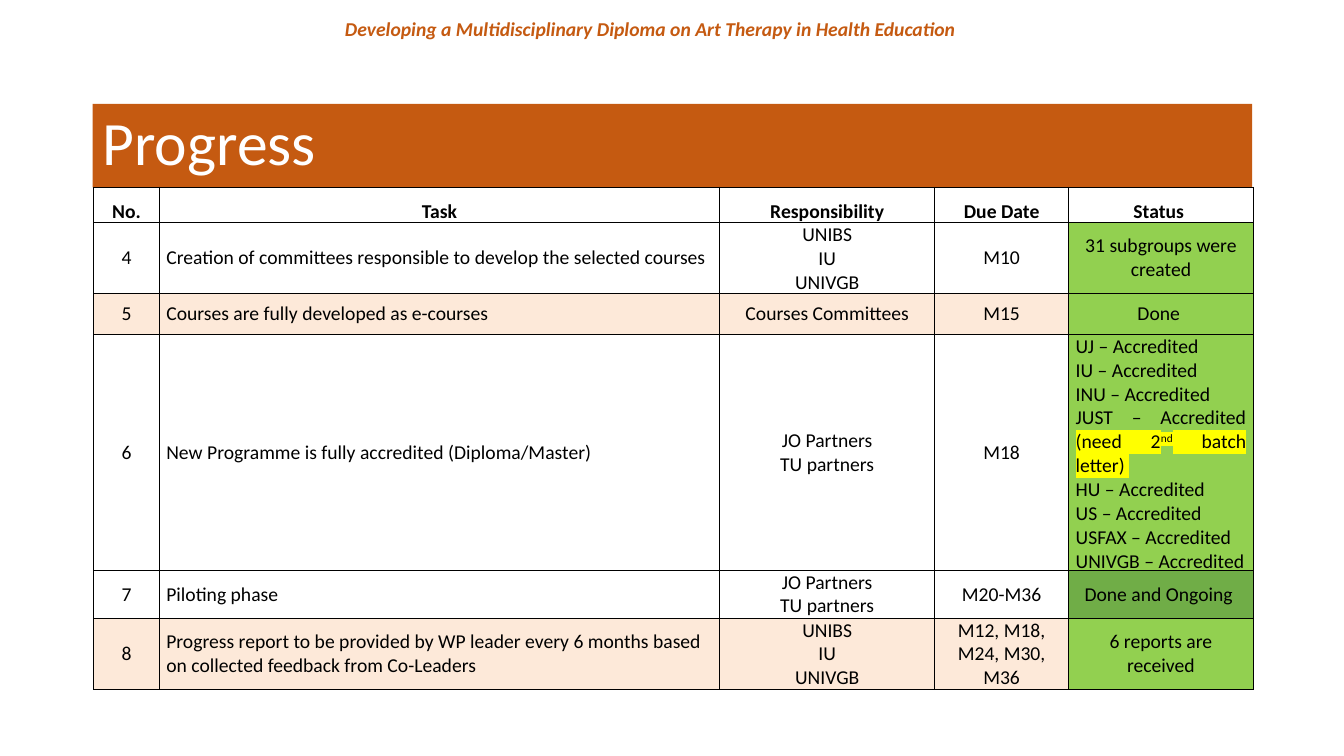
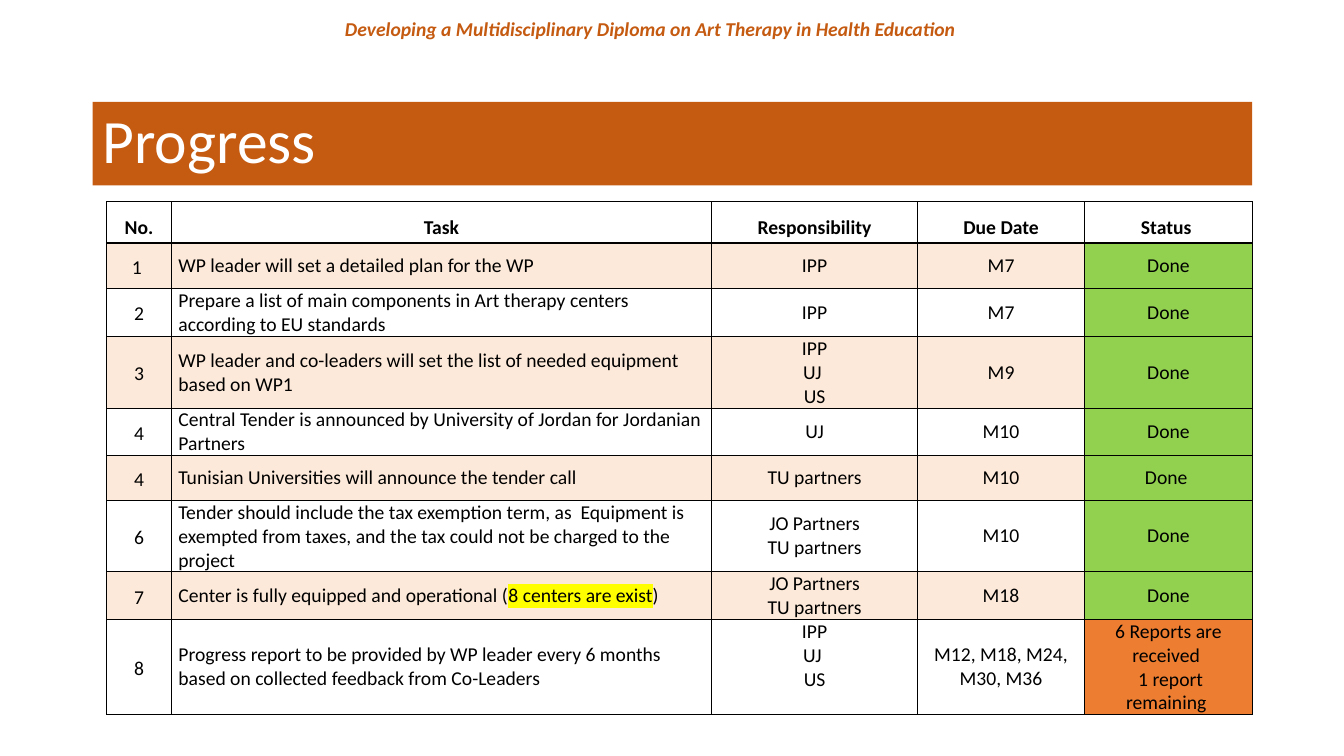
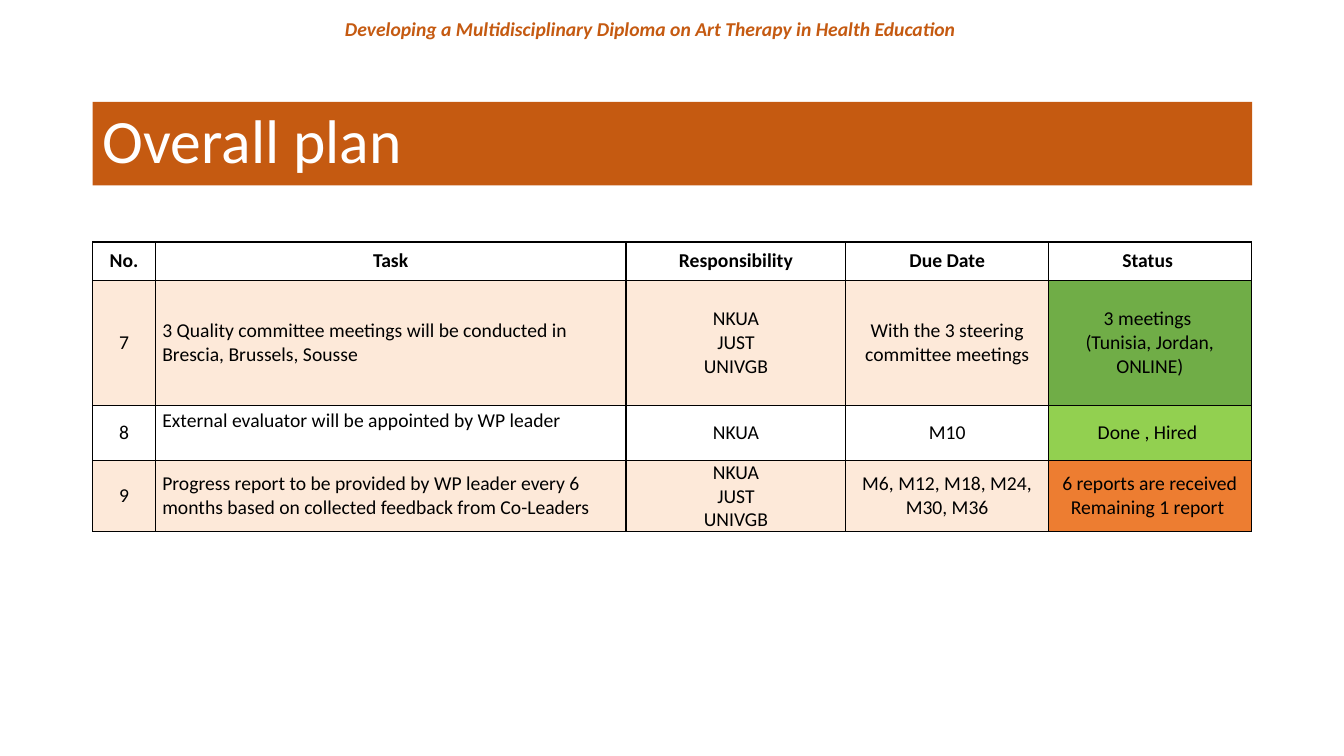
from dataclasses import dataclass
from typing import NamedTuple, Optional, Union

from lxml import etree
from pptx import Presentation
from pptx.dml.color import RGBColor
from pptx.enum.shapes import MSO_SHAPE
from pptx.enum.text import MSO_ANCHOR, PP_ALIGN
from pptx.oxml.ns import qn
from pptx.util import Emu, Pt

CENTER, LEFT, JUSTIFY = PP_ALIGN.CENTER, PP_ALIGN.LEFT, PP_ALIGN.JUSTIFY
MIDDLE = MSO_ANCHOR.MIDDLE
RECTANGLE = MSO_SHAPE.RECTANGLE

# Shared look: lengths are px, 100 to the inch
EMU_PER_PX = 9144
SLIDE_W, SLIDE_H = 1333, 750
BAND_LEFT, BAND_W, BAND_H = 92, 1150, 83
CELL_INSET = 7
LINE_H = 24
FONT = "Calibri"
BODY_PT, TITLE_PT = 14, 44
ORANGE, BLACK, WHITE, YELLOW = "C55A11", "000000", "FFFFFF", "FFFF00"
PEACH, DONE, ONGOING, REMAINING = "FDE9D9", "92D050", "70AD47", "ED7D31"

PROJECT = "Developing a Multidisciplinary Diploma on Art Therapy in Health Education "
HEADINGS = ("No.", "Task", "Responsibility", "Due Date", "Status ")
TASK, RESPONSIBILITY, STATUS = 1, 2, 4
REPORT_TASK = ("Progress report to be provided by WP leader every 6 months "
               "based on collected feedback from Co-Leaders")
JO_TU = "JO Partners\nTU partners"
BRESCIA_GROUP = "UNIBS\nIU\nUNIVGB"
CENTER_GROUP = "IPP\nUJ \nUS"
QUALITY_GROUP = "NKUA\nJUST\nUNIVGB"


class Run(NamedTuple):
    text: str
    highlight: Optional[str] = None
    superscript: bool = False


# One line of text per newline, or a list of paragraphs made of runs
Content = Union[str, list[list[Run]]]


@dataclass
class TaskRow:
    number: str
    task: Content
    responsibility: str
    due: str
    status: Content = "Done"
    status_fill: str = DONE
    shaded: bool = False
    status_align: PP_ALIGN = CENTER
    raised_column: Optional[int] = None  # its text sits half a line higher


@dataclass
class Plan:
    title: str
    band_top: int
    left: int
    top: int
    columns: list[int]
    heights: list[int]
    rows: list[TaskRow]
    heading_spacing: float = 1.0
    number_spacing: float = 1.0
    number_after: int = 0


ACCREDITATION = [
    [Run("UJ – Accredited ")],
    [Run("IU – Accredited ")],
    [Run("INU – Accredited")],
    [Run("JUST – Accredited "), Run("(need 2", YELLOW), Run("nd", YELLOW, True),
     Run(" batch letter) ", YELLOW)],
    *([Run(f"{name} – Accredited")] for name in ("HU", "US", "USFAX", "UNIVGB")),
]

PLANS = [
    Plan("Progress", 103, 93, 186, [65, 556, 213, 133, 183], [30, 68, 41, 45, 48, 68], [
        TaskRow("4", "Creation of committees responsible to develop the selected courses",
                BRESCIA_GROUP, "M10", "31 subgroups were created"),
        TaskRow("5", "Courses are fully developed as e-courses",
                "Courses Committees", "M15", "Done ", shaded=True),
        TaskRow("6", "New Programme is fully accredited (Diploma/Master)",
                JO_TU, "M18", ACCREDITATION, status_align=JUSTIFY),
        TaskRow("7", "Piloting phase", JO_TU, "M20-M36", "Done and Ongoing ", ONGOING),
        TaskRow("8", REPORT_TASK, BRESCIA_GROUP, "M12, M18, M24, M30, M36",
                "6 reports are received", shaded=True),
    ], heading_spacing=1.5),
    Plan("Progress", 101, 106, 200, [64, 536, 204, 166, 166],
         [41, 45, 48, 71, 45, 45, 48, 48, 69], [
        TaskRow("1 ", "WP leader will set a detailed plan for the WP", "IPP", "M7", shaded=True),
        TaskRow("2", "Prepare a list of main components in Art therapy centers "
                "according to EU standards", "IPP", "M7"),
        TaskRow("3", "WP leader and co-leaders will set the list of needed equipment "
                "based on WP1", CENTER_GROUP, "M9", shaded=True),
        TaskRow("4", "Central Tender is announced by University of Jordan for Jordanian "
                "Partners", "UJ", "M10"),
        TaskRow("4", "Tunisian Universities will announce the tender call",
                "TU partners", "M10", "Done ", shaded=True),
        TaskRow("6", "Tender should include the tax exemption term, as  Equipment is exempted "
                "from taxes, and the tax could not be charged to the project", JO_TU, "M10"),
        TaskRow("7", [[Run("Center is fully equipped and operational ("),
                       Run("8 centers are exist", YELLOW), Run(")")]],
                JO_TU, "M18", shaded=True),
        TaskRow("8", REPORT_TASK, CENTER_GROUP, "M12, M18, M24, M30, M36",
                "6 Reports are received \n 1 report remaining ", REMAINING,
                raised_column=RESPONSIBILITY),
    ], heading_spacing=1.5, number_spacing=1.15, number_after=10),
    Plan("Overall plan", 101, 92, 240, [62, 467, 218, 201, 201], [38, 124, 55, 55], [
        TaskRow("7", "3 Quality committee meetings will be conducted in "
                "Brescia, Brussels, Sousse", QUALITY_GROUP,
                "With the 3 steering committee meetings",
                "3 meetings \n(Tunisia, Jordan, ONLINE)", ONGOING, shaded=True),
        TaskRow("8", "External evaluator will be appointed by WP leader", "NKUA", "M10",
                "Done , Hired ", raised_column=TASK),
        TaskRow("9", REPORT_TASK, QUALITY_GROUP, "M6, M12, M18, M24, M30, M36",
                "6 reports are received\nRemaining 1 report ", REMAINING, shaded=True),
    ]),
]


def px(length: int) -> Emu:
    return Emu(length * EMU_PER_PX)


def rgb(color: str) -> RGBColor:
    return RGBColor.from_string(color)


def add_run(paragraph, part: Run, size: int, color: str,
            bold: bool = False, italic: bool = False) -> None:
    run = paragraph.add_run()
    run.text = part.text
    font = run.font
    font.name, font.size, font.bold, font.italic = FONT, Pt(size), bold, italic
    font.color.rgb = rgb(color)
    properties = run.font._element
    if part.highlight:
        highlight = etree.Element(qn("a:highlight"))
        etree.SubElement(highlight, qn("a:srgbClr"), val=part.highlight)
        properties.find(qn("a:solidFill")).addnext(highlight)
    if part.superscript:
        properties.set("baseline", "30000")


def add_header(slide) -> None:
    header = slide.shapes.add_textbox(px(314), px(12), px(667), px(34))
    header.text_frame.word_wrap = True
    paragraph = header.text_frame.paragraphs[0]
    paragraph.alignment = CENTER
    add_run(paragraph, Run(PROJECT), BODY_PT, ORANGE, bold=True, italic=True)


def add_title_band(slide, title: str, top: int) -> None:
    band = slide.shapes.add_shape(RECTANGLE, px(BAND_LEFT), px(top), px(BAND_W), px(BAND_H))
    band.shadow.inherit = False
    band.fill.solid()
    band.fill.fore_color.rgb = rgb(ORANGE)
    band.line.fill.background()
    band.text_frame.word_wrap = True
    band.text_frame.vertical_anchor = MIDDLE
    paragraph = band.text_frame.paragraphs[0]
    paragraph.alignment = LEFT
    paragraph.line_spacing = 0.9
    add_run(paragraph, Run(title), TITLE_PT, WHITE)


def add_borders(cell) -> None:
    properties = cell._tc.get_or_add_tcPr()
    for side in ("a:lnL", "a:lnR", "a:lnT", "a:lnB"):
        line = etree.SubElement(properties, qn(side), w=str(Pt(1)))
        fill = etree.SubElement(line, qn("a:solidFill"))
        etree.SubElement(fill, qn("a:srgbClr"), val=BLACK)


def fill_cell(cell, content: Content, fill: str, align: PP_ALIGN = CENTER, bold: bool = False,
              spacing: float = 1.0, after: int = 0, bottom: int = 0) -> None:
    add_borders(cell)
    cell.fill.solid()
    cell.fill.fore_color.rgb = rgb(fill)
    cell.vertical_anchor = MIDDLE
    cell.margin_left = cell.margin_right = px(CELL_INSET)
    cell.margin_top, cell.margin_bottom = px(0), px(bottom)
    if isinstance(content, str):
        content = [[Run(line)] for line in content.split("\n")]
    frame = cell.text_frame
    for index, runs in enumerate(content):
        paragraph = frame.add_paragraph() if index else frame.paragraphs[0]
        paragraph.alignment = align
        paragraph.line_spacing = spacing
        paragraph.space_after = Pt(after)
        for part in runs:
            add_run(paragraph, part, BODY_PT, BLACK, bold)


def add_plan_table(slide, plan: Plan) -> None:
    table = slide.shapes.add_table(
        len(plan.heights), len(plan.columns), px(plan.left), px(plan.top),
        px(sum(plan.columns)), px(sum(plan.heights))).table
    table.first_row = table.horz_banding = False
    for column, width in zip(table.columns, plan.columns):
        column.width = px(width)
    for table_row, height in zip(table.rows, plan.heights):
        table_row.height = px(height)

    for column, heading in enumerate(HEADINGS):
        fill_cell(table.cell(0, column), heading, WHITE, bold=True, spacing=plan.heading_spacing)

    for index, row in enumerate(plan.rows, start=1):
        fills = [PEACH if row.shaded else WHITE] * STATUS + [row.status_fill]
        aligns = [CENTER, LEFT, CENTER, CENTER, row.status_align]
        contents = [row.number, row.task, row.responsibility, row.due, row.status]
        for column, (content, fill, align) in enumerate(zip(contents, fills, aligns)):
            is_number = column == 0
            fill_cell(table.cell(index, column), content, fill, align,
                      spacing=plan.number_spacing if is_number else 1.0,
                      after=plan.number_after if is_number else 0,
                      bottom=LINE_H if column == row.raised_column else 0)


def main() -> None:
    deck = Presentation()
    deck.slide_width, deck.slide_height = px(SLIDE_W), px(SLIDE_H)
    blank = deck.slide_layouts[6]
    for plan in PLANS:
        slide = deck.slides.add_slide(blank)
        add_header(slide)
        add_title_band(slide, plan.title, plan.band_top)
        add_plan_table(slide, plan)
    deck.save("out.pptx")


if __name__ == "__main__":
    main()
